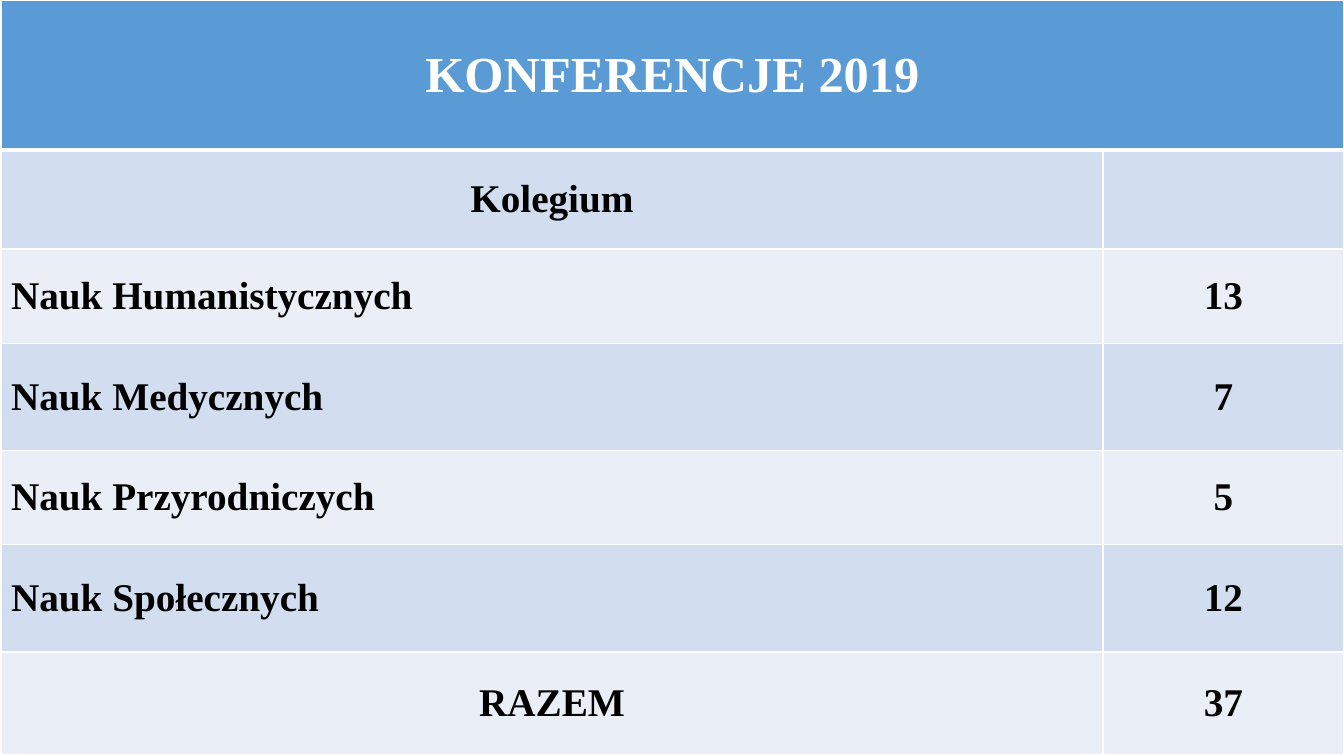
from lxml.etree import SubElement
from pptx import Presentation
from pptx.dml.color import RGBColor
from pptx.enum.text import MSO_ANCHOR, PP_ALIGN
from pptx.oxml.ns import qn
from pptx.util import Inches, Pt

WHITE = RGBColor(0xFF, 0xFF, 0xFF)
BLACK = RGBColor(0x00, 0x00, 0x00)
HEADER_BLUE = RGBColor(0x5B, 0x9B, 0xD5)
BANDS = (RGBColor(0xEA, 0xEF, 0xF7), RGBColor(0xD2, 0xDE, 0xEF))
FONT = "Times New Roman"
COLUMN_WIDTHS = (10.93, 2.39)
ROW_HEIGHTS = (1.49, 0.98, 0.94, 1.06, 0.93, 1.07, 1.02)
ROWS = (
    ("KONFERENCJE 2019", ""),
    ("Kolegium", ""),
    ("Nauk Humanistycznych", "13"),
    ("Nauk Medycznych", "7"),
    ("Nauk Przyrodniczych", "5"),
    ("Nauk Społecznych", "12"),
    ("RAZEM", "37"),
)
CENTERED_ROWS = (0, 1, len(ROWS) - 1)


def add_borders(cell, top, bottom):
    properties = cell._tc.get_or_add_tcPr()
    for side, width in (("L", 1), ("R", 1), ("T", top), ("B", bottom)):
        line = SubElement(properties, qn(f"a:ln{side}"), w=str(Pt(width)))
        fill = SubElement(line, qn("a:solidFill"))
        SubElement(fill, qn("a:srgbClr"), val=str(WHITE))


def format_cell(cell, text, row, column):
    header = row == 0
    add_borders(cell, 3 if row == 1 else 1, 3 if header else 1)
    cell.fill.solid()
    cell.fill.fore_color.rgb = HEADER_BLUE if header else BANDS[row % 2]
    cell.vertical_anchor = MSO_ANCHOR.MIDDLE
    cell.text = text
    para = cell.text_frame.paragraphs[0]
    centered = column == 1 or row in CENTERED_ROWS
    para.alignment = PP_ALIGN.CENTER if centered else PP_ALIGN.LEFT
    para.font.name = FONT
    para.font.size = Pt(36 if header else 28)
    para.font.bold = True
    para.font.color.rgb = WHITE if header else BLACK


def add_conference_table(page, left, top):
    frame = page.shapes.add_table(
        len(ROWS), len(COLUMN_WIDTHS), left, top,
        Inches(sum(COLUMN_WIDTHS)), Inches(sum(ROW_HEIGHTS)),
    )
    table = frame.table
    for column, width in zip(table.columns, COLUMN_WIDTHS):
        column.width = Inches(width)
    for row, height in zip(table.rows, ROW_HEIGHTS):
        row.height = Inches(height)
    for row, texts in enumerate(ROWS):
        for column, text in enumerate(texts):
            format_cell(table.cell(row, column), text, row, column)
    table.cell(0, 0).merge(table.cell(0, 1))


def main():
    deck = Presentation()
    deck.slide_width = Inches(13.33)
    deck.slide_height = Inches(7.5)
    page = deck.slides.add_slide(deck.slide_layouts[6])
    add_conference_table(page, Inches(0.01), 0)
    deck.save("out.pptx")


if __name__ == "__main__":
    main()
